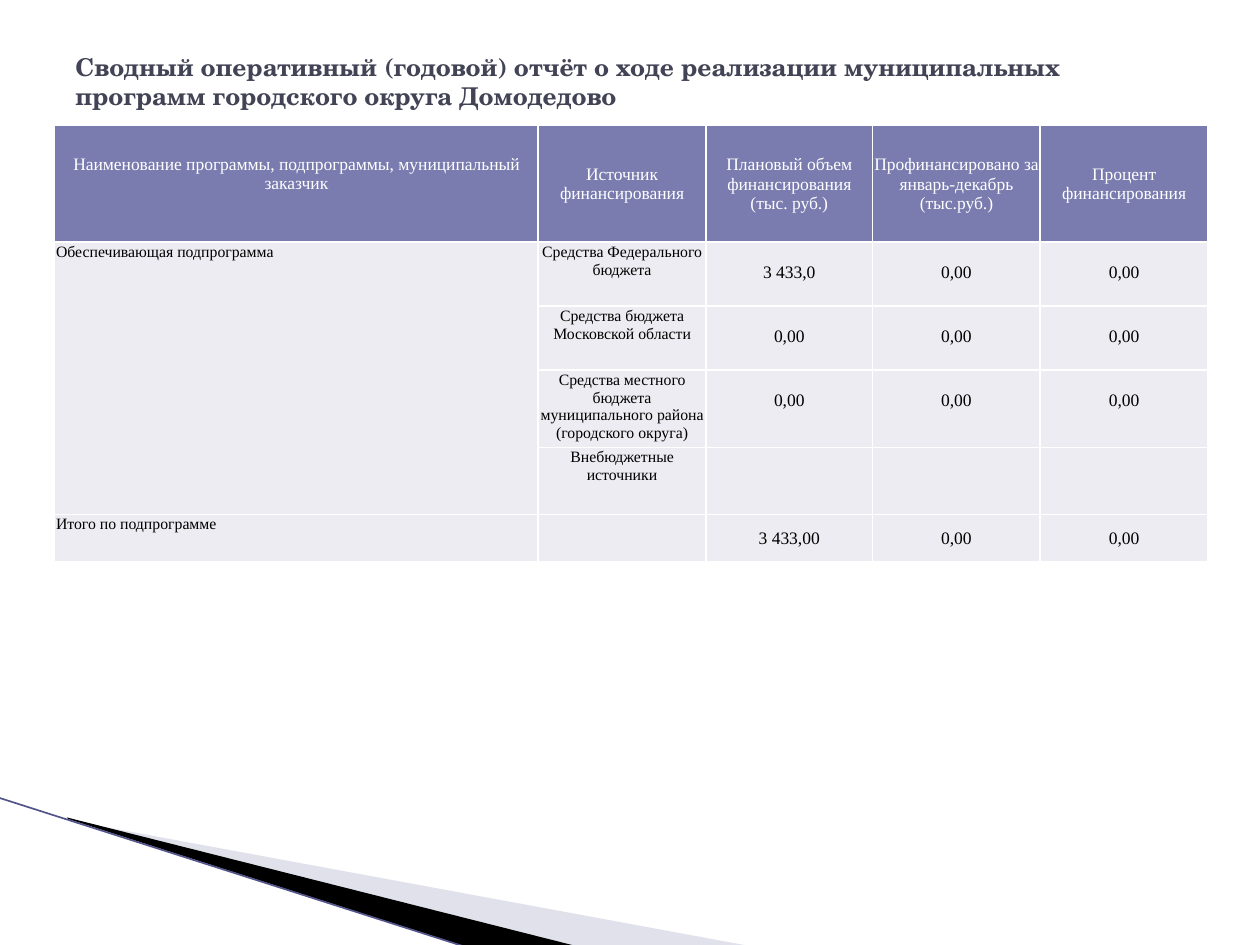
"""Build the municipal programme financing report slide."""
from lxml.etree import SubElement
from pptx import Presentation
from pptx.dml.color import RGBColor
from pptx.enum.shapes import MSO_CONNECTOR
from pptx.enum.text import MSO_ANCHOR as ANCHOR, PP_ALIGN as ALIGN
from pptx.oxml import parse_xml
from pptx.oxml.ns import nsdecls, qn
from pptx.util import Cm, Pt

COLORS = {"title": "424456", "head": "7A7BAE", "body": "ECECF2", "white": "FFFFFF",
          "black": "000000", "wedge": "B6B6D1", "edge": "53548A"}
SERIF = "Times New Roman"


def rgb(name):
    return RGBColor.from_string(COLORS[name])


def write(p, text, color, align, **font):
    p.alignment = align
    r = p.add_run()
    r.text = text
    r.font.color.rgb = rgb(color)
    for key, value in font.items():
        setattr(r.font, key, value)


prs = Presentation()
prs.slide_width, prs.slide_height = Cm(25.4), Cm(19.05)
s = prs.slides.add_slide(prs.slide_layouts[6])

wedges = [
    ("wedge", 40, [(1.4, 16.54), (15.11, 19.07), (11.58, 19.07), (1.4, 16.51)]),
    ("black", 100, [(1.35, 16.48), (11.61, 19.07), (9.45, 19.1), (1.37, 16.51)]),
]
for color, opacity, points in wedges:
    start, *rest = [(Cm(x), Cm(y)) for x, y in points]
    builder = s.shapes.build_freeform(*start)
    builder.add_line_segments(rest)
    sp = builder.convert_to_shape()
    sp.shadow.inherit = False
    sp.line.fill.background()
    sp.fill.solid()
    sp.fill.fore_color.rgb = rgb(color)
    if opacity < 100:
        clr = sp.fill._xPr.find(qn("a:solidFill"))[0]
        SubElement(clr, qn("a:alpha")).set("val", str(opacity * 1000))

edge = s.shapes.add_connector(MSO_CONNECTOR.STRAIGHT, Cm(-0.03), Cm(16.08), Cm(9.42), Cm(19.1))
edge.line.color.rgb = rgb("edge")
edge.line.width = Pt(0.95)
SubElement(edge._element.spPr, qn("a:effectLst"))

tf = s.shapes.add_textbox(Cm(1.27), Cm(0.76), Cm(22.86), Cm(1.75)).text_frame
tf.word_wrap = True
tf.vertical_anchor = ANCHOR.MIDDLE
write(tf.paragraphs[0],
      "Сводный оперативный (годовой) отчёт о ходе реализации муниципальных "
      "программ городского округа Домодедово",
      "title", ALIGN.LEFT, name="TeX Gyre Schola", size=Pt(14), bold=True)

rows = [
    ["Наименование программы, подпрограммы, муниципальный заказчик", "Источник финансирования",
     "Плановый объем финансирования (тыс. руб.)",
     "Профинансировано за январь-декабрь (тыс.руб.)", "Процент финансирования"],
    ["Обеспечивающая подпрограмма", "Средства Федерального бюджета", "3 433,0", "0,00", "0,00"],
    ["", "Средства бюджета Московской области", "0,00", "0,00", "0,00"],
    ["", "Средства местного бюджета муниципального района (городского округа)",
     "0,00", "0,00", "0,00"],
    ["", "Внебюджетные источники", "", "", ""],
    ["Итого по подпрограмме", "", "3 433,00", "0,00", "0,00"],
]
widths = [9.75, 3.38, 3.36, 3.38, 3.38]
heights = [2.36, 1.29, 1.29, 1.42, 1.35, 0.95]
last = len(rows) - 1

table = s.shapes.add_table(len(rows), len(widths), Cm(1.1), Cm(2.52),
                           Cm(sum(widths)), Cm(sum(heights))).table
for column, width in zip(table.columns, widths):
    column.width = Cm(width)
for row, height in zip(table.rows, heights):
    row.height = Cm(height)
table.cell(1, 0).merge(table.cell(4, 0))

for i, texts in enumerate(rows):
    for j, text in enumerate(texts):
        cell = table.cell(i, j)
        head, number = i == 0, i > 0 and j > 1
        layout = {
            "margin_left": Cm(0.03), "margin_right": Cm(0.03),
            "margin_top": Cm(0.43 if number and i < last else 0.03),
            "margin_bottom": Cm(0.41 if head and j == 0 else 0),
            "vertical_anchor": ANCHOR.MIDDLE if head or (number and i == last) else ANCHOR.TOP,
        }
        for key, value in layout.items():
            setattr(cell, key, value)
        cell.fill.solid()
        cell.fill.fore_color.rgb = rgb("head" if head else "body")
        tcPr = cell._tc.get_or_add_tcPr()
        for k, side in enumerate(("lnL", "lnR", "lnT", "lnB")):
            tcPr.insert(k, parse_xml(
                f'<a:{side} {nsdecls("a")} w="12700"><a:solidFill>'
                f'<a:srgbClr val="{COLORS["white"]}"/></a:solidFill></a:{side}>'))
        if text:
            write(cell.text_frame.paragraphs[0], text, "white" if head else "black",
                  ALIGN.CENTER if head or j else ALIGN.LEFT,
                  name=SERIF, size=Pt(10 if head or number else 9))

prs.save("out.pptx")
